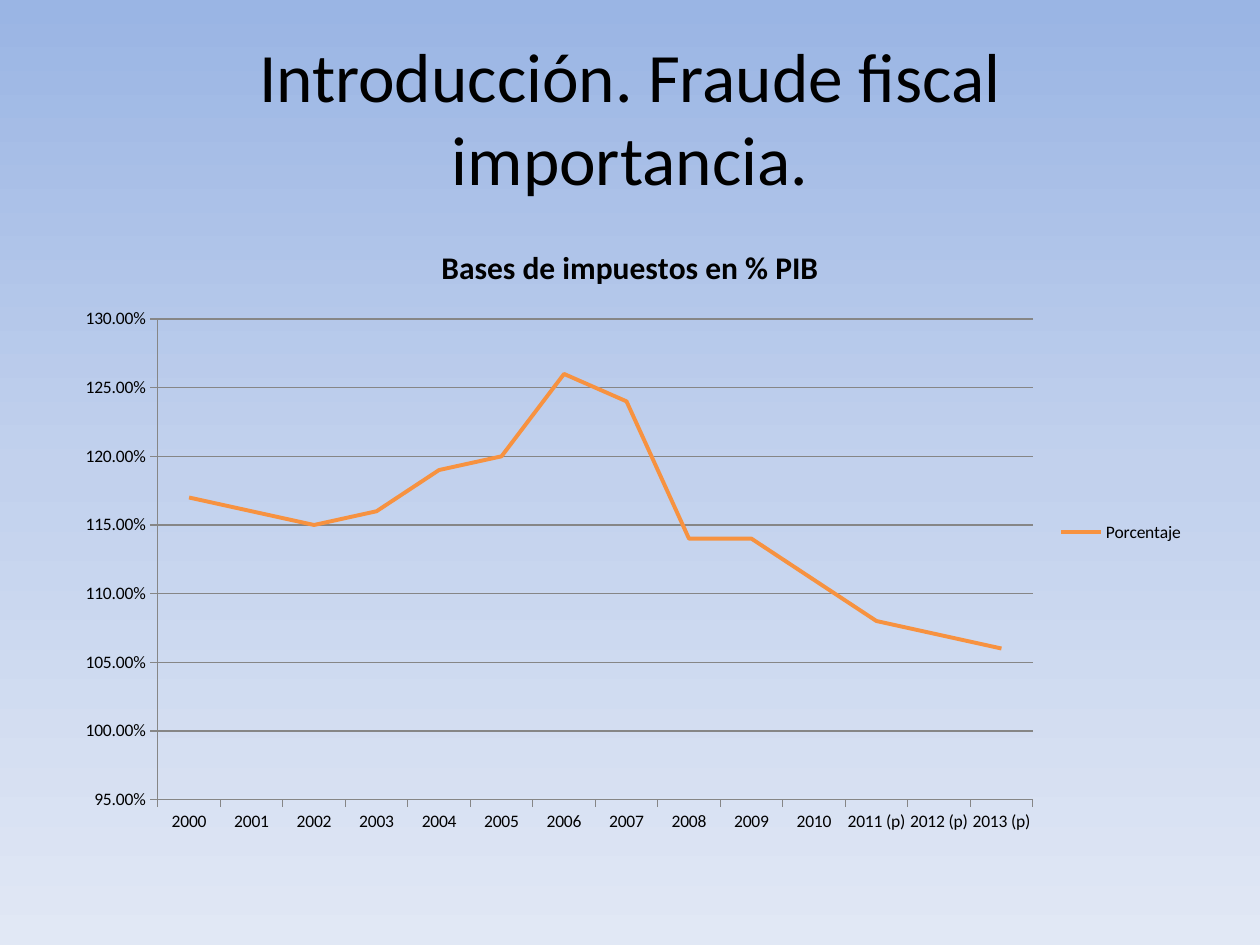
from copy import deepcopy
from dataclasses import dataclass

from pptx import Presentation
from pptx.chart.axis import _BaseAxis
from pptx.chart.chart import Chart
from pptx.chart.data import CategoryChartData
from pptx.dml.color import RGBColor
from pptx.enum.chart import XL_CHART_TYPE, XL_LEGEND_POSITION, XL_TICK_MARK
from pptx.enum.text import MSO_ANCHOR, PP_ALIGN
from pptx.slide import Slide
from pptx.text.text import Font
from pptx.util import Inches, Pt

FONT = "Calibri"
BLACK = "000000"
AXIS_GRAY = "868686"
ORANGE = "F79240"


@dataclass
class GradientColor:
    position: float
    color: str


@dataclass
class TaxBase:
    year: str
    share: float


BACKGROUND = [
    GradientColor(0, "9AB5E4"),
    GradientColor(0.5, "C2D1ED"),
    GradientColor(1, "E1E8F5"),
]

TAX_BASES = [
    TaxBase("2000", 1.17),
    TaxBase("2001", 1.16),
    TaxBase("2002", 1.15),
    TaxBase("2003", 1.16),
    TaxBase("2004", 1.19),
    TaxBase("2005", 1.2),
    TaxBase("2006", 1.26),
    TaxBase("2007", 1.24),
    TaxBase("2008", 1.14),
    TaxBase("2009", 1.14),
    TaxBase("2010", 1.11),
    TaxBase("2011 (p)", 1.08),
    TaxBase("2012 (p)", 1.07),
    TaxBase("2013 (p)", 1.06),
]


def hex_color(value: str) -> RGBColor:
    return RGBColor.from_string(value)


def style_font(font: Font, size: float, bold: bool = False) -> None:
    font.name = FONT
    font.size = Pt(size)
    font.bold = bold
    font.color.rgb = hex_color(BLACK)


def paint_background(page: Slide) -> None:
    fill = page.background.fill
    fill.gradient()
    fill.gradient_angle = 270
    first_stop = page._element.xpath(".//p:bg//a:gs")[0]
    first_stop.addnext(deepcopy(first_stop))
    for stop, entry in zip(fill.gradient_stops, BACKGROUND):
        stop.position = entry.position
        stop.color.rgb = hex_color(entry.color)


def write_title(page: Slide, text: str) -> None:
    title = page.shapes.title
    title.left, title.top = Inches(0.5), Inches(0.3)
    title.width, title.height = Inches(9), Inches(1.25)
    frame = title.text_frame
    frame.text = text
    frame.word_wrap = True
    frame.vertical_anchor = MSO_ANCHOR.MIDDLE
    para = frame.paragraphs[0]
    para.alignment = PP_ALIGN.CENTER
    style_font(para.runs[0].font, 39.6)


def style_axis(axis: _BaseAxis) -> None:
    axis.major_tick_mark = XL_TICK_MARK.OUTSIDE
    axis.minor_tick_mark = XL_TICK_MARK.NONE
    axis.format.line.color.rgb = hex_color(AXIS_GRAY)
    axis.format.line.width = Pt(0.75)
    style_font(axis.tick_labels.font, 10)


def style_value_axis(chart: Chart) -> None:
    axis = chart.value_axis
    style_axis(axis)
    axis.minimum_scale, axis.maximum_scale = 0.95, 1.3
    axis.major_unit = 0.05
    axis.tick_labels.number_format = "0.00%"
    axis.tick_labels.number_format_is_linked = False
    axis.has_major_gridlines = True
    gridline = axis.major_gridlines.format.line
    gridline.color.rgb = hex_color(AXIS_GRAY)
    gridline.width = Pt(0.75)


def add_tax_chart(page: Slide) -> None:
    data = CategoryChartData(number_format="0.00%")
    data.categories = [base.year for base in TAX_BASES]
    data.add_series("Porcentaje", [base.share for base in TAX_BASES])
    chart = page.shapes.add_chart(
        XL_CHART_TYPE.LINE, Inches(0.5), Inches(1.75), Inches(9), Inches(4.95), data
    ).chart
    style_font(chart.font, 10)
    chart.has_title = True
    heading = chart.chart_title.text_frame
    heading.text = "Bases de impuestos en % PIB"
    style_font(heading.paragraphs[0].runs[0].font, 18, bold=True)
    chart.has_legend = True
    chart.legend.position = XL_LEGEND_POSITION.RIGHT
    chart.legend.include_in_layout = False
    style_font(chart.legend.font, 10)
    style_axis(chart.category_axis)
    style_value_axis(chart)
    plot = chart.plots[0]
    plot.vary_by_categories = False
    series = plot.series[0]
    series.smooth = False
    series.format.line.color.rgb = hex_color(ORANGE)
    series.format.line.width = Pt(2.25)


def main() -> None:
    deck = Presentation()
    deck.slide_width, deck.slide_height = Inches(10), Inches(7.5)
    page = deck.slides.add_slide(deck.slide_layouts[5])
    paint_background(page)
    write_title(page, "Introducción. Fraude fiscal importancia.")
    add_tax_chart(page)
    deck.save("out.pptx")


if __name__ == "__main__":
    main()
